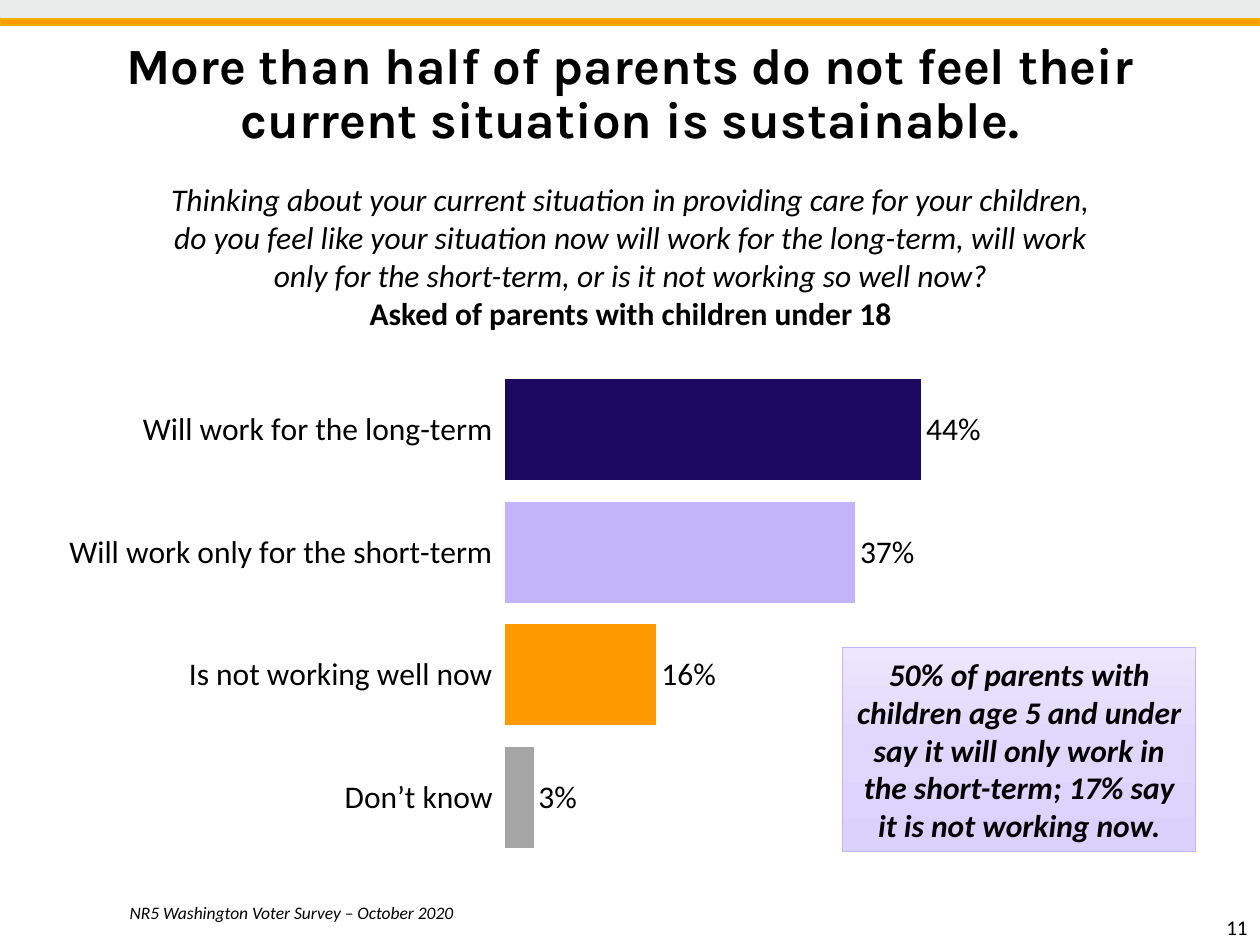
from copy import deepcopy

from lxml import etree
from pptx import Presentation
from pptx.chart.data import CategoryChartData
from pptx.dml.color import RGBColor
from pptx.enum.chart import XL_CHART_TYPE, XL_LABEL_POSITION, XL_TICK_LABEL_POSITION, XL_TICK_MARK
from pptx.enum.shapes import MSO_SHAPE
from pptx.enum.text import MSO_ANCHOR, MSO_AUTO_SIZE, PP_ALIGN
from pptx.oxml.ns import qn
from pptx.util import Pt

BAR = XL_CHART_TYPE.BAR_CLUSTERED
OUTSIDE_END = XL_LABEL_POSITION.OUTSIDE_END
LOW = XL_TICK_LABEL_POSITION.LOW
NO_TICK = XL_TICK_MARK.NONE
RECTANGLE = MSO_SHAPE.RECTANGLE
TOP, MIDDLE, BOTTOM = MSO_ANCHOR.TOP, MSO_ANCHOR.MIDDLE, MSO_ANCHOR.BOTTOM
NO_AUTOSIZE = MSO_AUTO_SIZE.NONE
LEFT, CENTER, RIGHT = PP_ALIGN.LEFT, PP_ALIGN.CENTER, PP_ALIGN.RIGHT

COLORS = {
    "text": "000000",
    "band": "E8EBE9",
    "orange": "FF9900",
    "stripe edge": "EBB201",
    "navy": "1C085F",
    "lavender": "C3B3F8",
    "gray": "A5A5A5",
    "callout top": "ECE7FD",
    "callout middle": "DFD7FC",
    "callout bottom": "DBD1FD",
}
TITLE = "More than half of parents do not feel their current situation is sustainable."
QUESTION = (
    "Thinking about your current situation in providing care for your children, "
    "do you feel like your situation now will work for the long-term, will work "
    "only for the short-term, or is it not working so well now?"
)
CALLOUT = (
    "50% of parents with children age 5 and under say it will only work in "
    "the short-term; 17% say it is not working now."
)
ANSWERS = [
    ("Will work for the long-term", 0.44, "navy"),
    ("Will work only for the short-term", 0.37, "lavender"),
    ("Is not working well now", 0.16, "orange"),
    ("Don’t know", 0.03, "gray"),
]


def color(name):
    return RGBColor.from_string(COLORS[name])


class SlideBuilder:
    """Holds the text style and the slide being built; lengths are in points."""

    body_font = "Calibri"
    title_font = "Karla"

    def __init__(self, slide):
        self.slide = slide

    def style(self, font, size, bold=False, italic=False, name=body_font):
        font.name = name
        font.size = Pt(size)
        font.bold = bold
        font.italic = italic
        font.color.rgb = color("text")

    def fill_text(self, shape, lines, size, align=LEFT, anchor=TOP, spacing=None, name=body_font):
        """Fill a shape with (text, bold, italic) paragraphs."""
        frame = shape.text_frame
        frame.word_wrap = True
        frame.auto_size = NO_AUTOSIZE
        frame.vertical_anchor = anchor
        for number, (text, bold, italic) in enumerate(lines):
            para = frame.add_paragraph() if number else frame.paragraphs[0]
            para.text = text
            para.alignment = align
            para.line_spacing = spacing
            self.style(para.font, size, bold, italic, name)

    def title(self, text, left, top, width, height):
        box = self.slide.shapes.title
        box.left, box.top, box.width, box.height = map(Pt, (left, top, width, height))
        self.fill_text(box, [(text, True, False)], 29, CENTER, spacing=0.9, name=self.title_font)

    def text(self, lines, left, top, width, height, size, **layout):
        box = self.slide.shapes.add_textbox(*map(Pt, (left, top, width, height)))
        self.fill_text(box, lines, size, **layout)

    def rectangle(self, left, top, width, height, fill=None, edge=None, edge_width=1):
        box = self.slide.shapes.add_shape(RECTANGLE, *map(Pt, (left, top, width, height)))
        box.shadow.inherit = False
        if fill:
            box.fill.solid()
            box.fill.fore_color.rgb = color(fill)
        if edge:
            box.line.color.rgb = color(edge)
            box.line.width = Pt(edge_width)
        else:
            box.line.fill.background()
        return box

    def callout(self, text, left, top, width, height):
        box = self.rectangle(left, top, width, height, edge="lavender", edge_width=0.5)
        box.fill.gradient()
        box.fill.gradient_angle = 270
        stop_list = box.element.spPr.find(".//" + qn("a:gsLst"))
        middle = deepcopy(stop_list[0])
        middle.set("pos", "50000")
        stop_list.insert(1, middle)
        names = ("callout top", "callout middle", "callout bottom")
        for stop, name in zip(box.fill.gradient_stops, names):
            stop.color.rgb = color(name)
        self.fill_text(box, [(text, True, True)], 18, CENTER, MIDDLE)

    def bar_chart(self, answers, left, top, width, height, plot_area):
        """Draw one bar per (label, share, colour); plot_area is x, y, w, h as fractions."""
        data = CategoryChartData(number_format="0%")
        data.categories = [label for label, _, _ in answers]
        data.add_series("Series 1", [share for _, share, _ in answers])
        frame = self.slide.shapes.add_chart(BAR, *map(Pt, (left, top, width, height)), data)
        chart = frame.chart
        chart.has_legend = False
        chart.has_title = False
        self.style(chart.font, 10)

        categories = chart.category_axis
        categories.reverse_order = True
        categories.major_tick_mark = NO_TICK
        categories.tick_label_position = LOW
        categories.format.line.fill.background()
        self.style(categories.tick_labels.font, 18)
        values = chart.value_axis
        values.minimum_scale, values.maximum_scale = 0, 0.6
        values.major_unit = 0.15
        values.has_major_gridlines = False
        values.visible = False

        plot = chart.plots[0]
        plot.gap_width = 21
        plot.vary_by_categories = False
        series = plot.series[0]
        series.format.fill.solid()
        series.format.fill.fore_color.rgb = color(answers[0][2])
        for index, (_, _, name) in enumerate(answers[1:], 1):
            fill = series.points[index].format.fill
            fill.solid()
            fill.fore_color.rgb = color(name)
        labels = series.data_labels
        labels.show_value = True
        labels.number_format = "0%"
        labels.number_format_is_linked = False
        labels.position = OUTSIDE_END
        self.style(labels.font, 18)
        self.place_plot(chart, plot_area)

    def place_plot(self, chart, plot_area):
        area = chart.element.find(".//" + qn("c:plotArea"))
        layout = area.find(qn("c:layout"))
        if layout is None:
            layout = etree.Element(qn("c:layout"))
            area.insert(0, layout)
        manual = etree.SubElement(layout, qn("c:manualLayout"))
        settings = [("layoutTarget", "inner"), ("xMode", "edge"), ("yMode", "edge")]
        settings += zip("xywh", plot_area)
        for tag, value in settings:
            etree.SubElement(manual, qn("c:" + tag)).set("val", str(value))


def main():
    deck = Presentation()
    deck.slide_width, deck.slide_height = Pt(720), Pt(540)
    page = SlideBuilder(deck.slides.add_slide(deck.slide_layouts[5]))

    page.rectangle(0, 0, 720, 14.4, "band")
    page.rectangle(0, 10.8, 720, 3.6, "orange", "stripe edge")
    page.title(TITLE, 10.8, 19.4, 699, 90)
    page.bar_chart(ANSWERS, 0, 201.6, 648.7, 301, (0.445, 0.03, 0.5, 0.93))
    question = [(QUESTION, False, True), ("Asked of parents with children under 18", True, False)]
    page.text(question, 85, 99.4, 550.8, 116.6, 18, align=CENTER)
    page.callout(CALLOUT, 481.7, 370, 201.6, 116.6)
    source = [("NR5 Washington Voter Survey – October 2020", False, True)]
    page.text(source, 67, 488.2, 638, 43.2, 10, anchor=BOTTOM, spacing=0.9)
    page.text([("11", False, False)], 613.4, 519.1, 106.6, 21.6, 12, align=RIGHT)
    deck.save("out.pptx")


if __name__ == "__main__":
    main()
